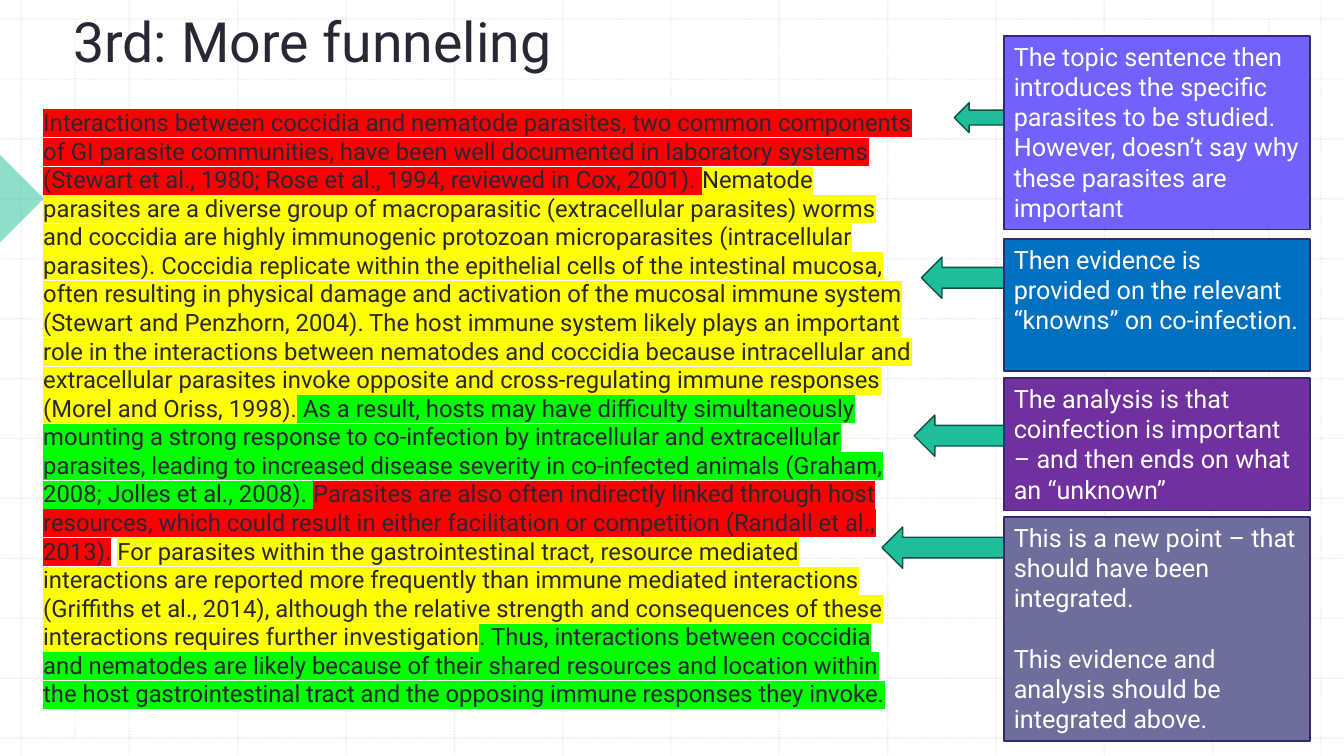
from lxml.etree import SubElement
from pptx import Presentation
from pptx.dml.color import RGBColor
from pptx.enum.dml import MSO_LINE
from pptx.enum.shapes import MSO_CONNECTOR, MSO_SHAPE
from pptx.enum.text import MSO_ANCHOR, PP_ALIGN
from pptx.oxml import parse_xml
from pptx.oxml.ns import nsdecls, qn
from pptx.util import Cm, Pt

COLORS = {
    "ink": "2A2735", "white": "FFFFFF", "grid": "BCBCBC",
    "teal": "1EBE9B", "teal edge": "0D5344", "box edge": "322B6F",
    "topic": "FF0000", "evidence": "FFFF00", "analysis": "00FF00",
    "violet": "7162FE", "blue": "0070C0", "purple": "7030A0", "slate": "6E6E9D",
}
FORMATS = {
    "title": {"size": Pt(39.6), "name": "Roboto"},
    "passage": {"size": Pt(17), "name": "Roboto"},
    "comment": {"size": Pt(18), "name": "Roboto"},
}
SLIDE_WIDTH, SLIDE_HEIGHT = 33.87, 19.05
GRID_COUNT = 13
GRID_LEFT, GRID_COLUMN = 0.53, 2.73
GRID_TOP, GRID_ROW = 0.48, 1.51
MARGIN_LINES = [1.9, 31.98]

TITLE = "3rd: More funneling"
TITLE_AREA = (1.6, 0.3, 28.68, 1.68)
PASSAGE_AREA = (0.84, 2.59, 22.5, 16.46)
PASSAGE = [
    ("topic", "Interactions between coccidia and nematode parasites, two common components of GI parasite communities, have been well documented in laboratory systems (Stewart et al., 1980; Rose et al., 1994, reviewed in Cox, 2001). "),
    ("evidence", "Nematode parasites are a diverse group of macroparasitic (extracellular parasites) worms and coccidia are highly immunogenic protozoan microparasites (intracellular parasites). Coccidia replicate within the epithelial cells of the intestinal mucosa, often resulting in physical damage and activation of the mucosal immune system (Stewart and Penzhorn, 2004). The host immune system likely plays an important role in the interactions between nematodes and coccidia because intracellular and extracellular parasites invoke opposite and cross-regulating immune responses (Morel and Oriss, 1998)."),
    ("analysis", " As a result, hosts may have difficulty simultaneously mounting a strong response to co-infection by intracellular and extracellular parasites, leading to increased disease severity in co-infected animals (Graham, 2008; Jolles et al., 2008). "),
    ("topic", "Parasites are also often indirectly linked through host resources, which could result in either facilitation or competition (Randall et al., 2013)."),
    (None, " "),
    ("evidence", "For parasites within the gastrointestinal tract, resource mediated interactions are reported more frequently than immune mediated interactions (Griffiths et al., 2014), although the relative strength and consequences of these interactions requires further investigation"),
    ("analysis", ". Thus, interactions between coccidia and nematodes are likely because of their shared resources and location within the host gastrointestinal tract and the opposing immune responses they invoke."),
]
COMMENT_LEFT, COMMENT_WIDTH = 25.3, 7.72
COMMENTS = [
    ("violet", 0.91, 4.88, 0, [
        "The topic sentence then introduces the specific parasites to be studied.",
        "However, doesn’t say why these parasites are important"]),
    ("blue", 6.02, 3.33, 0, [
        "Then evidence is provided on the relevant “knowns” on co-infection."]),
    ("purple", 9.53, 3.33, 0, [
        "The analysis is that coinfection is important – and then ends on what an “unknown”"]),
    ("slate", 13.03, 5.64, 21.6, [
        "This is a new point – that should have been integrated.",
        "This evidence and analysis should be integrated above."]),
]
ARROWS = [
    (MSO_SHAPE.BENT_ARROW, (24.05, 2.59, 1.93, 1.5)),
    (MSO_SHAPE.LEFT_ARROW, (23.22, 6.48, 2.97, 1.04)),
    (MSO_SHAPE.LEFT_ARROW, (23.04, 10.46, 2.97, 1.04)),
    (MSO_SHAPE.LEFT_ARROW, (22.23, 13.28, 3.1, 1.04)),
]
MARKER_AREA = (-0.79, 4.22, 1.57, 1.57)


def rgb(name):
    """Return the named colour."""
    return RGBColor.from_string(COLORS[name])


def set_alpha(fill_parent, percent):
    """Set the opacity of the solid fill inside an element."""
    color = fill_parent.find(qn("a:solidFill"))[0]
    SubElement(color, qn("a:alpha")).set("val", str(percent * 1000))


def add_grid_line(page, *ends):
    """Draw one faint dotted line."""
    line = page.shapes.add_connector(MSO_CONNECTOR.STRAIGHT, *map(Cm, ends))
    line.line.color.rgb = rgb("grid")
    line.line.width = Pt(1)
    line.line.dash_style = MSO_LINE.ROUND_DOT
    set_alpha(line.line._ln, 30)
    SubElement(line._element.spPr, qn("a:effectLst"))


def add_grid(page):
    """Draw the background grid and its margin lines."""
    for step in range(GRID_COUNT):
        across, down = GRID_LEFT + step * GRID_COLUMN, GRID_TOP + step * GRID_ROW
        add_grid_line(page, across, 0, across, SLIDE_HEIGHT)
        add_grid_line(page, 0, down, SLIDE_WIDTH, down)
    for across in MARGIN_LINES:
        add_grid_line(page, across, GRID_TOP, across, SLIDE_HEIGHT - GRID_TOP)


def add_filled(page, kind, area, fill, edge=None):
    """Add a preset shape with a flat fill and an optional edge."""
    shape = page.shapes.add_shape(kind, *map(Cm, area))
    shape.shadow.inherit = False
    shape.fill.solid()
    shape.fill.fore_color.rgb = rgb(fill)
    if edge:
        shape.line.color.rgb = rgb(edge)
        shape.line.width = Pt(1)
    else:
        shape.line.fill.background()
    return shape


def add_span(para, text, style, color, highlight=None):
    """Add formatted text to a paragraph."""
    span = para.add_run()
    span.text = text
    for attribute, value in FORMATS[style].items():
        setattr(span.font, attribute, value)
    span.font.color.rgb = rgb(color)
    if highlight:
        mark = parse_xml(f'<a:highlight {nsdecls("a")}><a:srgbClr val="{COLORS[highlight]}"/></a:highlight>')
        span._r.rPr.find(qn("a:solidFill")).addnext(mark)


def add_text(page, area, style, spans, anchor):
    """Add a wrapped text box holding one paragraph."""
    box = page.shapes.add_textbox(*map(Cm, area))
    box.text_frame.word_wrap = True
    box.text_frame.vertical_anchor = anchor
    for highlight, text in spans:
        add_span(box.text_frame.paragraphs[0], text, style, "ink", highlight)


def add_comment(page, color, top, height, gap, lines):
    """Add one comment box of the right column."""
    area = (COMMENT_LEFT, top, COMMENT_WIDTH, height)
    frame = add_filled(page, MSO_SHAPE.RECTANGLE, area, color, "box edge").text_frame
    frame.word_wrap = True
    frame.vertical_anchor = MSO_ANCHOR.TOP
    for index, text in enumerate(lines):
        para = frame.add_paragraph() if index else frame.paragraphs[0]
        para.alignment = PP_ALIGN.LEFT
        if index and gap:
            para.space_before = Pt(gap)
        add_span(para, text, "comment", "white")


def main():
    """Build the slide and save it."""
    deck = Presentation()
    deck.slide_width, deck.slide_height = Cm(SLIDE_WIDTH), Cm(SLIDE_HEIGHT)
    page = deck.slides.add_slide(deck.slide_layouts[6])
    add_grid(page)
    marker = add_filled(page, MSO_SHAPE.RIGHT_TRIANGLE, MARKER_AREA, "teal")
    marker.rotation = 225
    set_alpha(marker._element.spPr, 50)
    add_text(page, TITLE_AREA, "title", [(None, TITLE)], MSO_ANCHOR.BOTTOM)
    add_text(page, PASSAGE_AREA, "passage", PASSAGE, MSO_ANCHOR.TOP)
    for kind, area in ARROWS:
        arrow = add_filled(page, kind, area, "teal", "teal edge")
        if kind == MSO_SHAPE.BENT_ARROW:
            arrow._element.spPr.xfrm.set("flipH", "1")
    for comment in COMMENTS:
        add_comment(page, *comment)
    deck.save("out.pptx")


if __name__ == "__main__":
    main()
